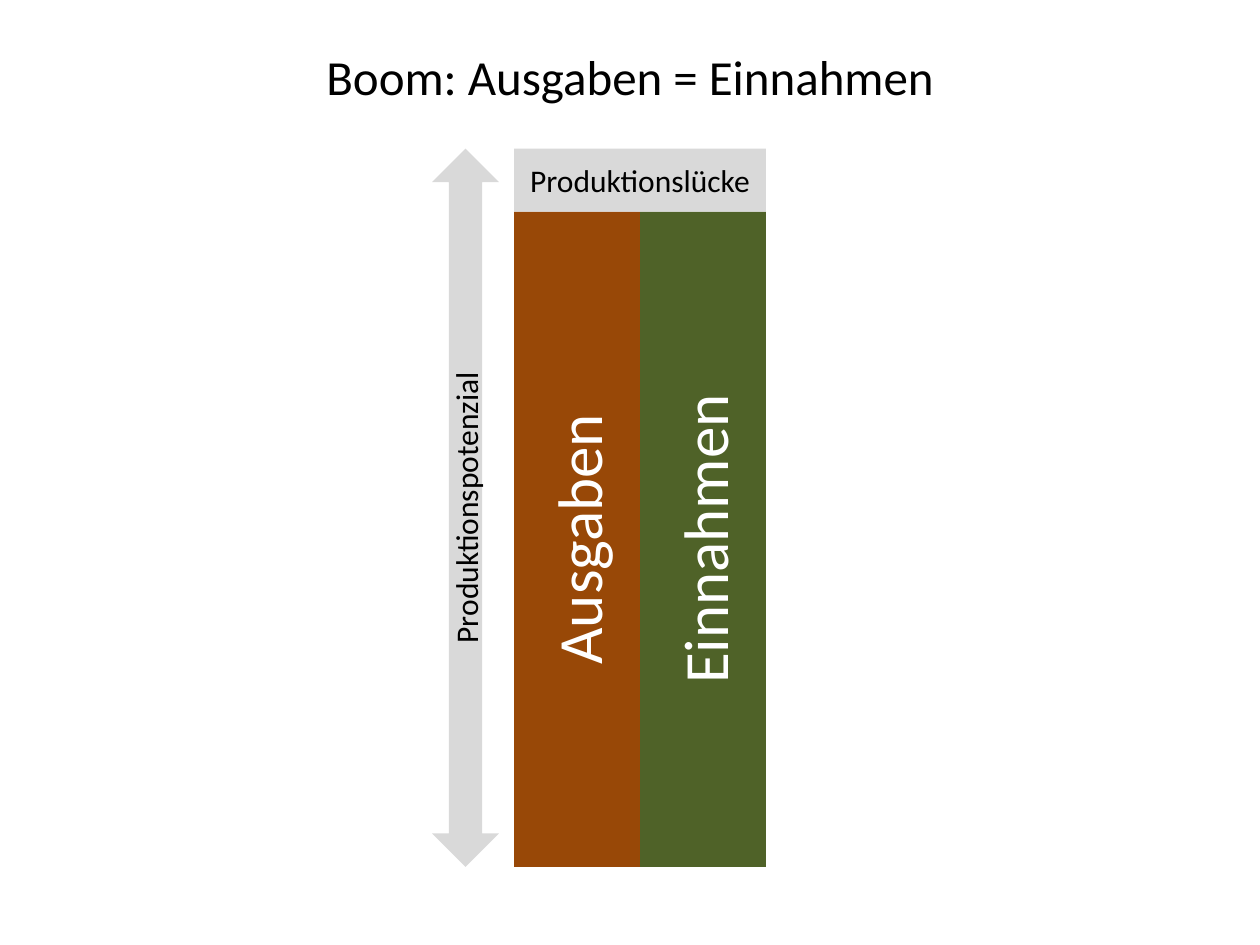
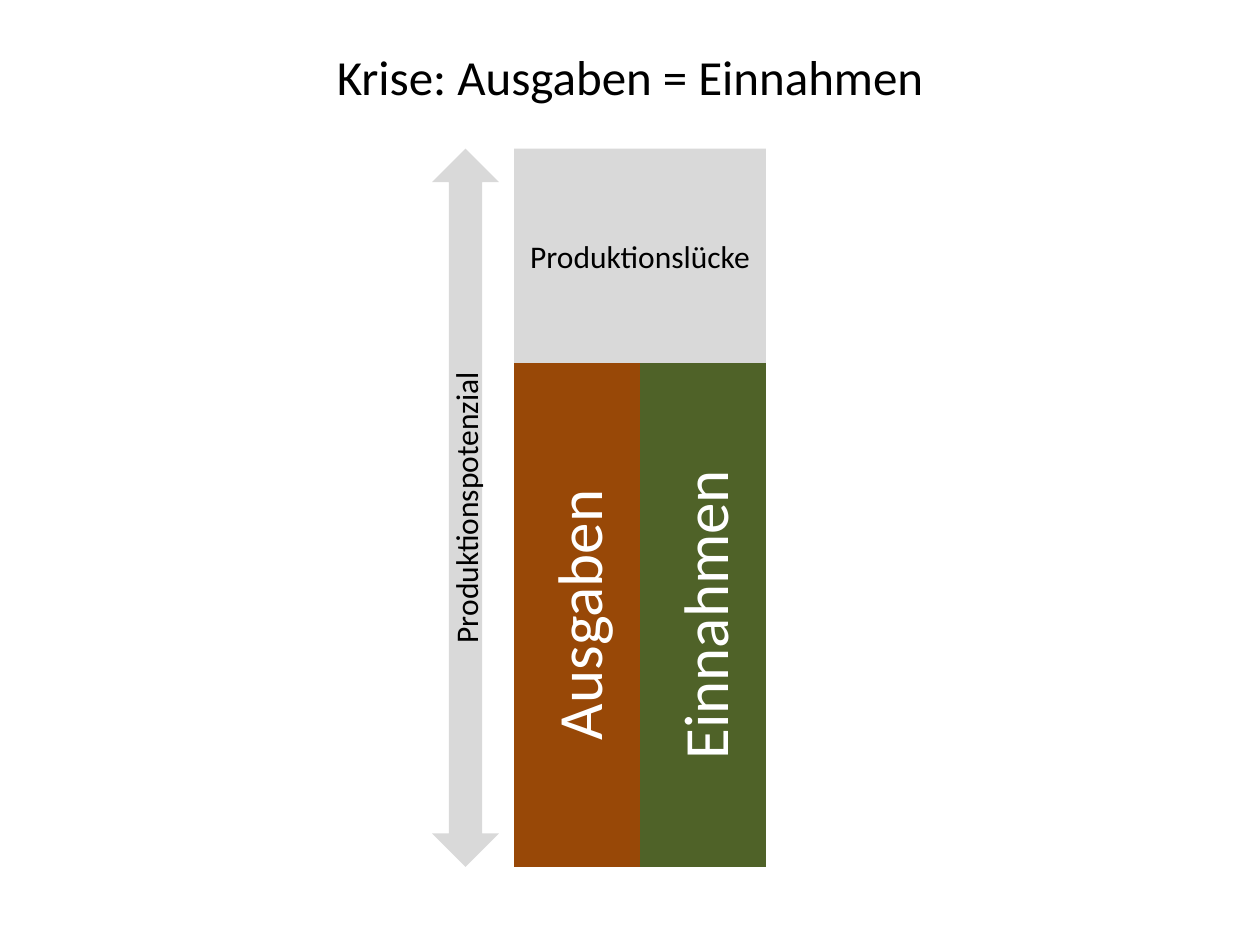
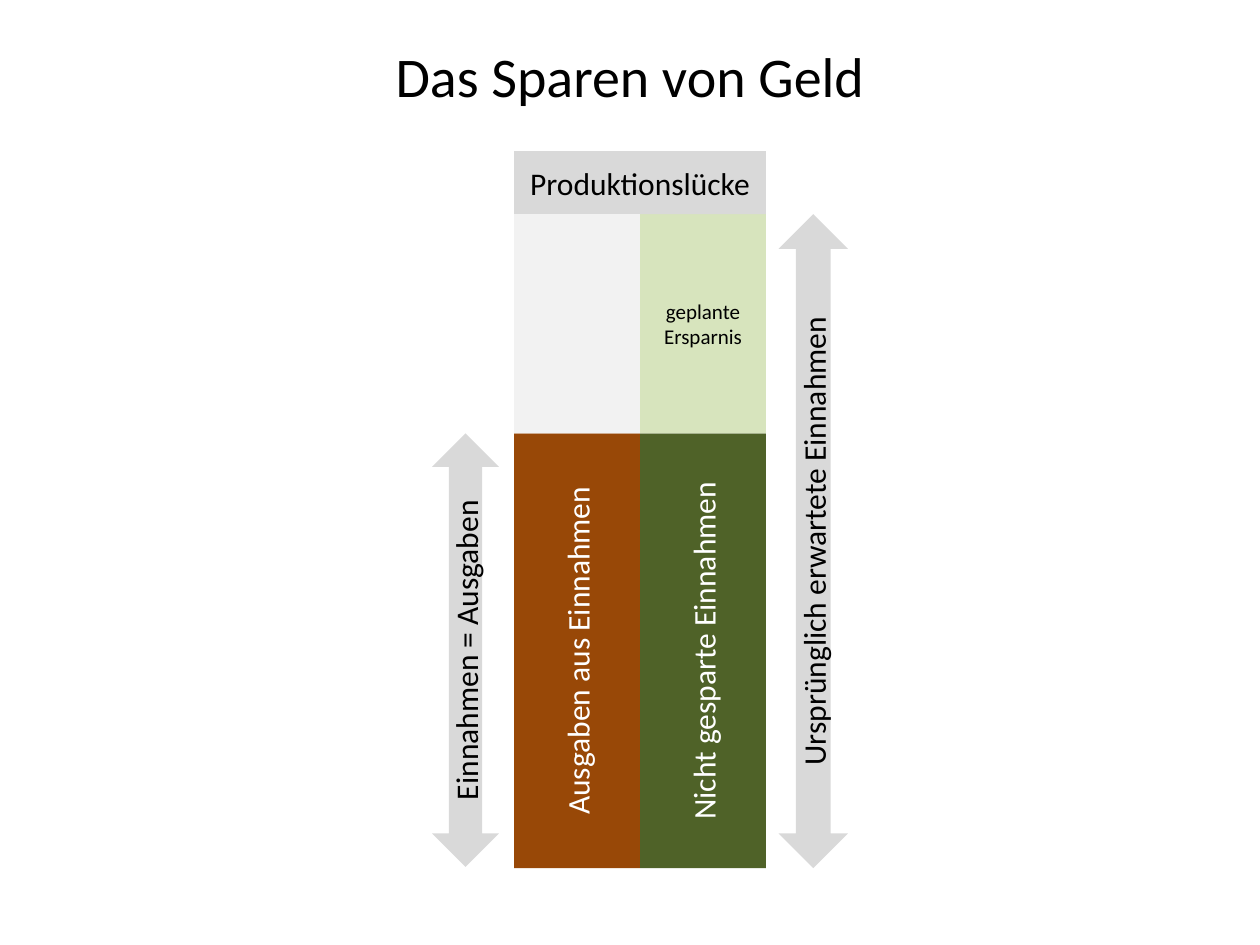
from dataclasses import dataclass

from pptx import Presentation
from pptx.dml.color import RGBColor as Rgb
from pptx.enum.shapes import MSO_SHAPE as Kind
from pptx.enum.text import MSO_ANCHOR as Anchor, MSO_AUTO_SIZE as Fit, PP_ALIGN as Align
from pptx.util import Inches, Pt


@dataclass(frozen=True)
class Theme:
    font: str = "Calibri"
    black: str = "000000"
    white: str = "FFFFFF"
    gray: str = "D9D9D9"
    pale: str = "F2F2F2"
    brown: str = "984807"
    green: str = "4F6228"
    light: str = "D7E4BD"
    small: int = 12
    label: int = 18
    title: int = 28
    head: int = 32
    large: int = 36


THEME = Theme()
LEFT, MID, COL = 4.08, 5.08, 1
ARROW, WIDTH = 3.43, 0.53
TOP, BASE = 1.18, 6.88


def write(shape, text, size=THEME.label, color=THEME.black, upward=False):
    """Fill a shape with centred text, optionally reading bottom to top."""
    frame = shape.text_frame
    frame.word_wrap = True
    frame.auto_size = Fit.NONE
    frame.vertical_anchor = Anchor.MIDDLE
    if upward:
        shape.element.txBody.bodyPr.set("vert", "vert270")
    para = frame.paragraphs[0]
    para.alignment = Align.CENTER
    run = para.add_run()
    run.text = text
    run.font.name = THEME.font
    run.font.size = Pt(size)
    run.font.color.rgb = Rgb.from_string(color)


class Deck:
    def __init__(self, theme):
        self.theme = theme
        self.prs = Presentation()
        self.prs.slide_width = Inches(10)
        self.prs.slide_height = Inches(7.5)
        self.slide = None

    def start(self, text, size):
        """Open a new slide with its title."""
        self.slide = self.prs.slides.add_slide(self.prs.slide_layouts[5])
        title = self.slide.shapes.title
        title.left, title.top = Inches(0.75), Inches(0.13)
        title.width, title.height = Inches(8.5), Inches(0.94)
        write(title, text, size=size)

    def block(self, x, top, width, end, fill, text="", kind=Kind.RECTANGLE, **style):
        """Draw a filled shape reaching from top down to end."""
        shape = self.slide.shapes.add_shape(
            kind, Inches(x), Inches(top), Inches(width), Inches(end - top))
        shape.shadow.inherit = False
        shape.fill.solid()
        shape.fill.fore_color.rgb = Rgb.from_string(fill)
        shape.line.fill.background()
        if text:
            write(shape, text, **style)

    def arrow(self, x, top, width, end, text):
        self.block(x, top, width, end, self.theme.gray, text,
                   kind=Kind.UP_DOWN_ARROW, upward=True)

    def bars(self, top, end, spent, earned, size):
        """Draw the spending and income columns side by side."""
        style = dict(size=size, color=self.theme.white, upward=True)
        self.block(MID, top, COL, end, self.theme.green, earned, **style)
        self.block(LEFT, top, COL, end, self.theme.brown, spent, **style)

    def gap(self, top, end):
        self.block(LEFT, top, 2 * COL, end, self.theme.gray, "Produktionslücke")


def balance(deck, phase, split):
    """Build a slide where spending equals income below the output gap."""
    deck.start(f"{phase}: Ausgaben = Einnahmen", THEME.title)
    deck.bars(split, BASE, "Ausgaben", "Einnahmen", THEME.large)
    deck.gap(TOP, split)
    deck.arrow(ARROW, TOP, WIDTH, BASE, "Produktionspotenzial")


def saving(deck):
    top, full, split, end = 1.2, 1.7, 3.44, 6.89
    deck.start("Das Sparen von Geld", THEME.head)
    deck.bars(split, end, "Ausgaben aus Einnahmen",
              "Nicht gesparte Einnahmen", THEME.label)
    deck.block(MID, full, COL, split, THEME.light, "geplante Ersparnis",
               size=THEME.small)
    deck.arrow(6.18, full, 0.55, end, "Ursprünglich erwartete Einnahmen")
    deck.arrow(ARROW, split, WIDTH, BASE, "Einnahmen = Ausgaben")
    deck.gap(top, full)
    deck.block(LEFT, full, COL, split, THEME.pale)


def main():
    deck = Deck(THEME)
    balance(deck, "Boom", 1.68)
    balance(deck, "Krise", 2.88)
    saving(deck)
    deck.prs.save("out.pptx")


if __name__ == "__main__":
    main()
